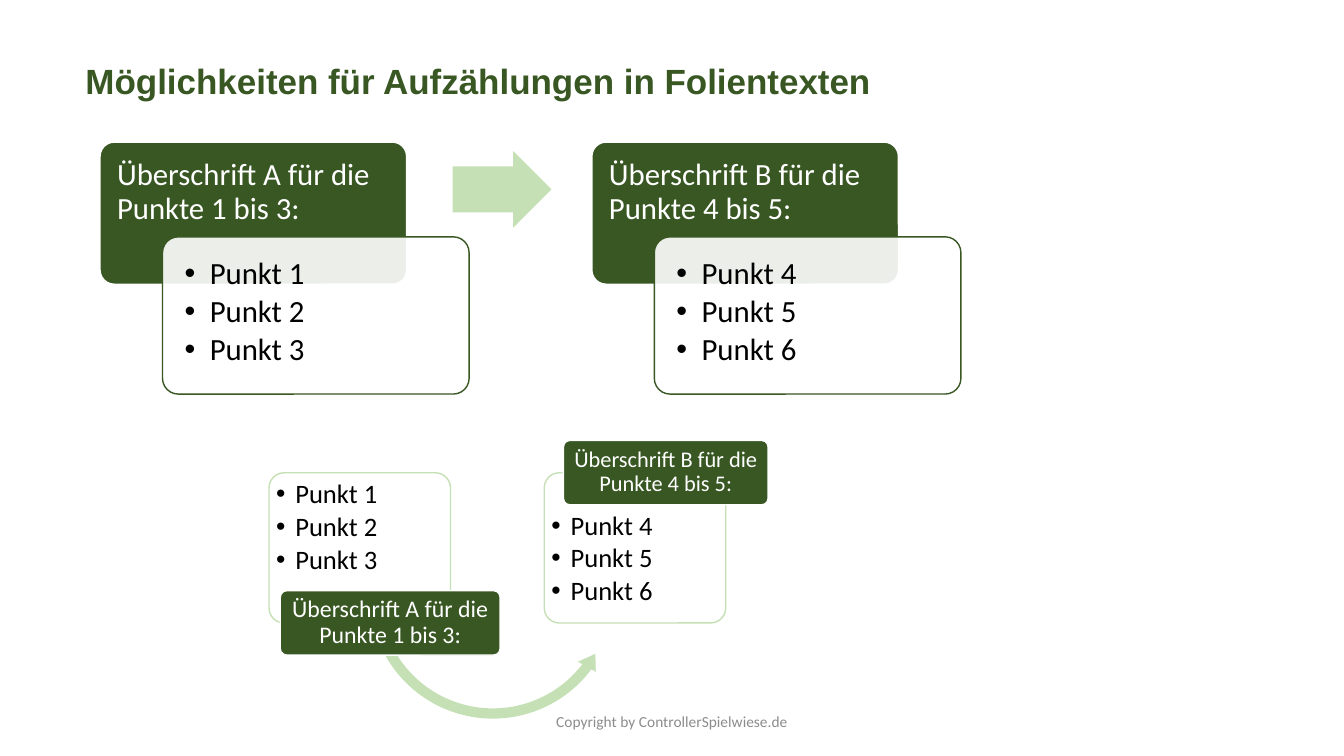
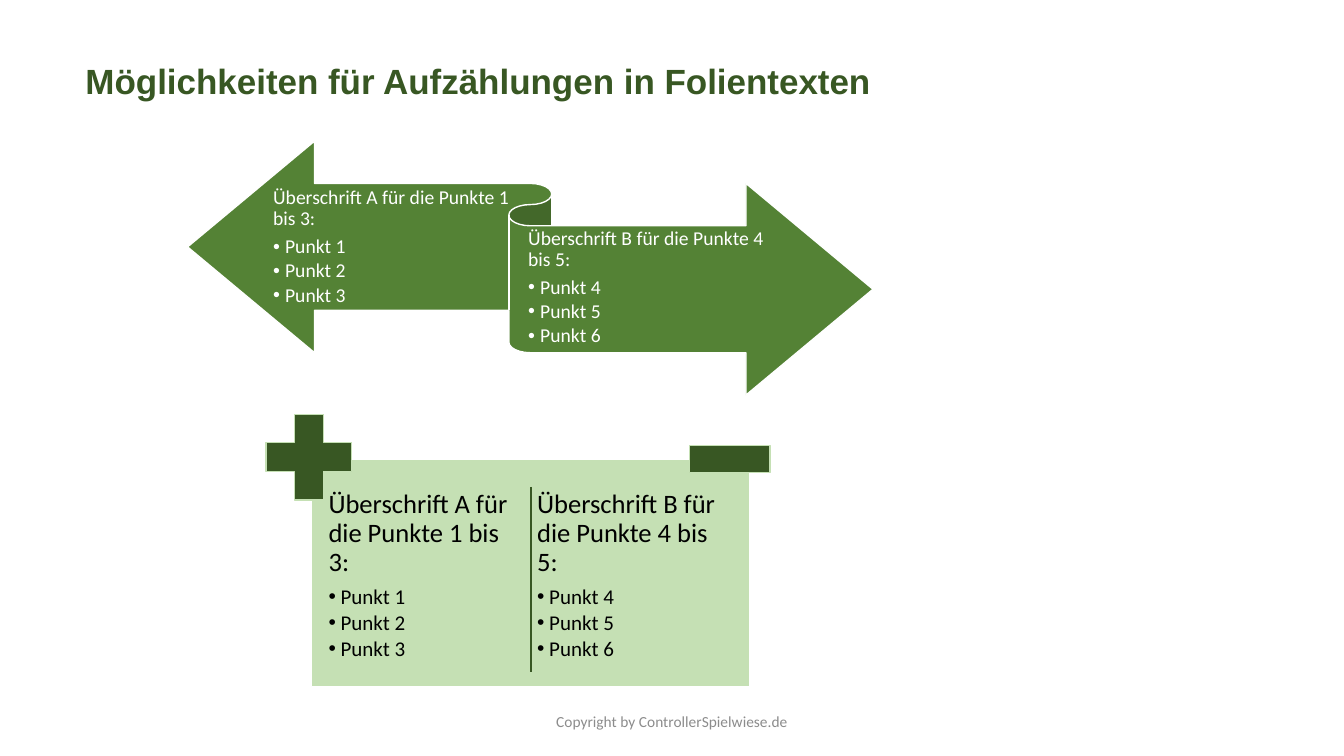
from lxml.etree import SubElement
from pptx import Presentation
from pptx.dml.color import RGBColor as RGB
from pptx.enum.shapes import MSO_CONNECTOR as LINK, MSO_SHAPE as KIND
from pptx.enum.text import MSO_ANCHOR as ANCHOR, PP_ALIGN as ALIGN
from pptx.oxml.ns import qn
from pptx.util import Pt

HUES = {
    "dark": "385723",
    "mid": "548235",
    "pale": "C5E0B4",
    "white": "FFFFFF",
    "black": "000000",
    "grey": "8C8C8C",
}
HEADS = ["Überschrift A für die Punkte 1 bis 3:", "Überschrift B für die Punkte 4 bis 5:"]
ITEMS = [["Punkt 1", "Punkt 2", "Punkt 3"], ["Punkt 4", "Punkt 5", "Punkt 6"]]


def draw(page, kind, box, fill, line=None, alpha=None, adjust=()):
    shape = page.shapes.add_shape(kind, *map(Pt, box))
    shape.shadow.inherit = False
    for i, value in enumerate(adjust):
        shape.adjustments[i] = value
    shape.fill.solid()
    shape.fill.fore_color.rgb = RGB.from_string(HUES[fill])
    if alpha:
        tone = shape.fill._xPr.find(qn("a:solidFill"))[0]
        SubElement(tone, qn("a:alpha"), val=str(alpha * 1000))
    if line:
        shape.line.color.rgb = RGB.from_string(HUES[line])
        shape.line.width = Pt(1)
    else:
        shape.line.fill.background()
    return shape


def write(shape, rows, hue, inset, anchor=ANCHOR.TOP, align=ALIGN.LEFT,
          face="Calibri", bold=False, tight=True):
    frame = shape.text_frame
    frame.word_wrap = True
    frame.vertical_anchor = anchor
    frame.margin_left, frame.margin_top, frame.margin_right, frame.margin_bottom = map(Pt, inset)
    for i, (text, size, indent) in enumerate(rows):
        para = frame.add_paragraph() if i else frame.paragraphs[0]
        para.text = text
        para.alignment = align
        if tight:
            para.line_spacing = 0.9
            para.space_after = Pt(size * (0.15 if indent else 0.35))
        if indent:
            para.level = 1
            props = para._p.get_or_add_pPr()
            props.set("marL", str(Pt(indent)))
            props.set("indent", str(-Pt(indent)))
            SubElement(props, qn("a:buFont"), typeface="Arial")
            SubElement(props, qn("a:buChar"), char="•")
        para.font.name = face
        para.font.size = Pt(size)
        para.font.bold = bold
        para.font.color.rgb = RGB.from_string(HUES[hue])


deck = Presentation()
deck.slide_width, deck.slide_height = Pt(960), Pt(540)
pages = [deck.slides.add_slide(deck.slide_layouts[6]) for _ in range(2)]

for page in pages:
    title = page.shapes.add_textbox(Pt(54), Pt(39), Pt(679), Pt(37.5))
    write(title, [("Möglichkeiten für Aufzählungen in Folientexten", 25, 0)], "dark",
          (7.2, 3.6, 7.2, 3.6), face="Arial", bold=True, tight=False)
    foot = page.shapes.add_textbox(Pt(318), Pt(500.5), Pt(324), Pt(29))
    write(foot, [("Copyright by ControllerSpielwiese.de", 11, 0)], "grey",
          (7.2, 3.6, 7.2, 3.6), ANCHOR.MIDDLE, ALIGN.CENTER, tight=False)

page = pages[0]
for i, (head, items) in enumerate(zip(HEADS, ITEMS)):
    left = 71.5 + i * 351.3
    card = draw(page, KIND.ROUNDED_RECTANGLE, (left, 101.5, 219, 101.5), "dark", "white",
                adjust=[0.1])
    write(card, [(head, 22, 0)], "white", (9.25, 9.25, 9.25, 6))
    card = draw(page, KIND.ROUNDED_RECTANGLE, (left + 44.6, 169.2, 219, 112.3), "white", "dark",
                90, [0.1])
    write(card, [(item, 22, 18) for item in items], "black", (12.5, 12, 12.5, 12))
draw(page, KIND.RIGHT_ARROW, (323.3, 108, 70.6, 54.7), "pale", adjust=[0.6, 0.5])

for left, top, items in zip((192.2, 388.8), (2.6, 25), ITEMS):
    panel = draw(page, KIND.ROUNDED_RECTANGLE, (left, 337.7, 129.6, 107.3), "white", "pale",
                 90, [0.1])
    write(panel, [(item, 19, 13.7) for item in items], "black", (2, top, 2, 2))
draw(page, KIND.LEFT_CIRCULAR_ARROW, (260.6, 334, 183, 183), "pale",
     adjust=[0.04, 4.51, 22.26, 90.25, 0.04])
LABELS = [((200.2, 421.9, 157, 46), 17, 3), ((402.5, 314.6, 146.2, 46), 16, 2.3)]
for head, (box, size, side) in zip(HEADS, LABELS):
    label = draw(page, KIND.ROUNDED_RECTANGLE, box, "dark", "white", adjust=[0.1])
    write(label, [(head, size, 0)], "white", (side, 1.5, side, 1.5), ANCHOR.MIDDLE, ALIGN.CENTER)

page = pages[1]
draw(page, KIND.LEFT_RIGHT_RIBBON, (134, 100.8, 489.6, 181.4), "mid", "white")
draw(page, KIND.RECTANGLE, (222.5, 328.3, 313.2, 162), "pale", "white")
WINGS = [(195.1, 132.5, 172.8, 88.6), (377.3, 161.3, 178.6, 89.3)]
for i, (head, items, wing) in enumerate(zip(HEADS, ITEMS, WINGS)):
    text = page.shapes.add_textbox(*map(Pt, wing))
    write(text, [(head, 14, 0)] + [(item, 14, 8.6) for item in items], "white",
          (0, 3.6, 0, 4.3), ANCHOR.MIDDLE)
    text = page.shapes.add_textbox(Pt(231.8 + i * 149), Pt(347.8), Pt(145.4), Pt(138.2))
    write(text, [(head, 19, 0)] + [(item, 15, 8.6) for item in items], "black", (2.9,) * 4)

draw(page, KIND.CROSS, (190.1, 295.9, 61.2, 61.2), "dark", "pale", adjust=[0.33])
draw(page, KIND.RECTANGLE, (492.5, 318.2, 57.6, 19.4), "dark", "pale")
rule = page.shapes.add_connector(LINK.STRAIGHT, Pt(379.4), Pt(347.8), Pt(379.4), Pt(480.2))
rule.line.color.rgb = RGB.from_string(HUES["dark"])
rule.line.width = Pt(1)
SubElement(rule._element.spPr, qn("a:effectLst"))

deck.save("out.pptx")
